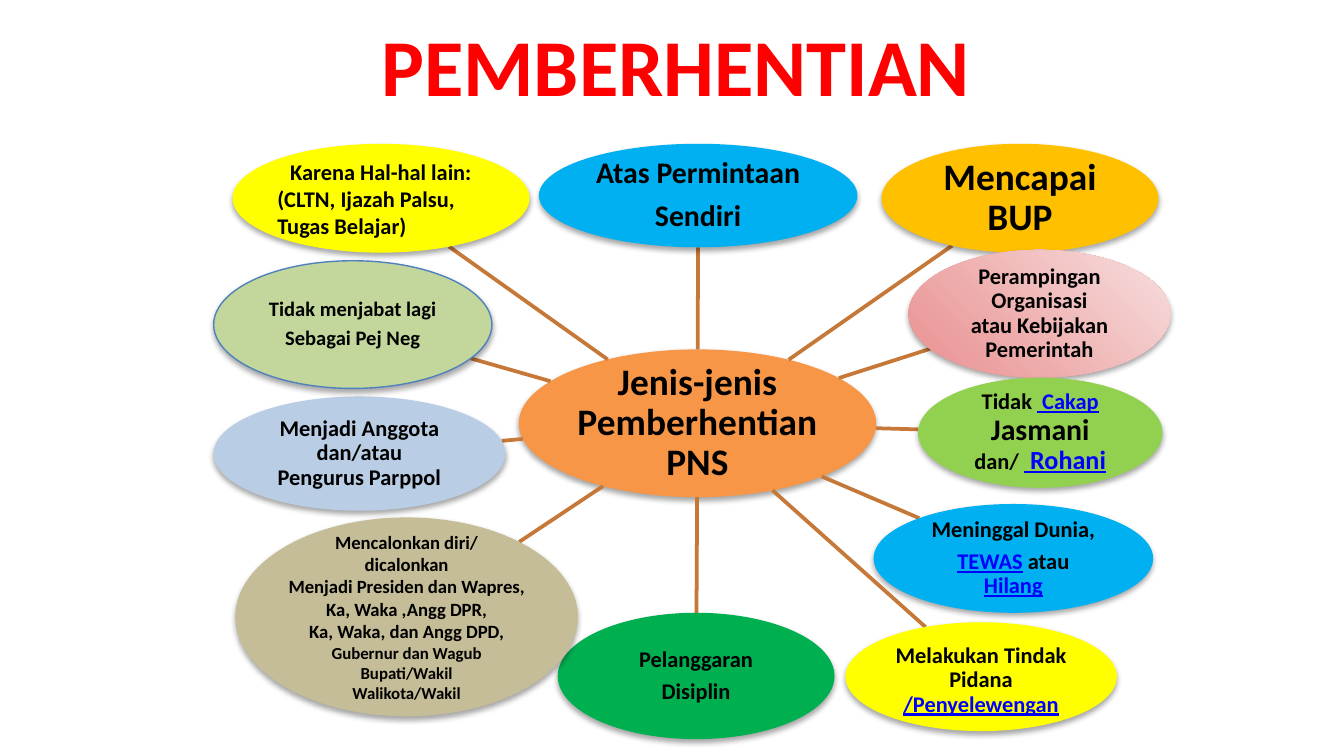
from math import hypot

from lxml.etree import SubElement
from pptx import Presentation
from pptx.dml.color import RGBColor
from pptx.enum.shapes import MSO_CONNECTOR, MSO_SHAPE
from pptx.enum.text import MSO_ANCHOR, PP_ALIGN
from pptx.oxml.ns import qn
from pptx.util import Emu, Pt

PX = 9144  # 100 px to the inch
FONT = "Calibri"
COLORS = {
    "black": "000000", "red": "FF0000", "link": "0000FF", "spoke": "C67838",
    "orange": "F79646", "sky": "00B0F0", "amber": "FFC000", "lime": "92D050",
    "yellow": "FFFF00", "green": "00B050", "khaki": "C4BD97", "pale blue": "B9CDE5",
    "sage": "C3D69B", "edge": "4F81BD", "rose": "E98F8F", "pale rose": "F7DEDE",
}
LINK = {"color": "link", "underline": True}
BREAK = "\n"

# Content: a paragraph is a string or a list of spans; a span is a string or (text, format)
TITLE = {"at": (53, 21, 900, 54), "text": ["PEMBERHENTIAN"], "size": 43.2, "color": "red"}
HUB = {"at": (386, 260, 266, 110), "fill": "orange", "size": 20,
       "text": ["Jenis-jenis", "Pemberhentian", "PNS"]}
NODES = [
    {"at": (401, 107, 237, 77), "fill": "sky", "size": 16, "after": 0.35,
     "text": ["Atas Permintaan", "Sendiri"]},
    {"at": (656, 107, 206, 81), "fill": "amber", "size": 20, "text": ["Mencapai BUP"]},
    {"at": (676, 186, 195, 95), "fill": ("rose", "pale rose"),
     "text": ["Perampingan", "Organisasi", "atau Kebijakan Pemerintah"]},
    {"at": (683, 281, 182, 82), "fill": "lime",
     "text": [["Tidak ", (" Cakap", LINK), BREAK, ("Jasmani", {"size": 16})],
              ["dan/ ", (" Rohani", {**LINK, "size": 14})]]},
    {"at": (650, 375, 208, 81), "fill": "sky", "after": 0.35,
     "text": ["Meninggal Dunia,",
              [("TEWAS", LINK), " atau", BREAK, ("Hilang", LINK)]]},
    {"at": (629, 463, 202, 81), "fill": "yellow", "top": 7,
     "text": ["Melakukan Tindak", "Pidana", [("/Penyelewengan", LINK)]]},
    {"at": (415, 456, 206, 94), "fill": "green", "after": 0.35,
     "text": ["Pelanggaran", "Disiplin"]},
    {"at": (175, 385, 255, 148), "fill": "khaki", "size": 10, "spacing": 1.0,
     "text": ["Mencalonkan diri/", "dicalonkan", "Menjadi Presiden dan Wapres,",
              "Ka, Waka ,Angg DPR,", "Ka, Waka, dan Angg DPD,",
              [("Gubernur dan Wagub", {"size": 9})], [("Bupati/Wakil", {"size": 9})],
              [("Walikota/Wakil", {"size": 9})]]},
    {"at": (159, 295, 217, 85), "fill": "pale blue",
     "text": ["Menjadi Anggota", "dan/atau", "Pengurus Parppol"]},
    {"at": (159, 194, 207, 95), "fill": "sage", "edge": "edge", "size": 11, "after": 0.35,
     "text": ["Tidak menjabat lagi", "Sebagai Pej Neg"]},
    {"at": (173, 107, 221, 81), "fill": "yellow", "spacing": 1.0,
     "aligns": [PP_ALIGN.CENTER, PP_ALIGN.LEFT],
     "text": ["Karena Hal-hal lain:", "(CLTN, Ijazah Palsu, Tugas Belajar)"]},
]


def color(name):
    return RGBColor.from_string(COLORS[name])


def px(*values):
    return [Emu(round(value * PX)) for value in values]


def write(box, text, size=12, color_name="black", spacing=0.9, after=0, top=1, aligns=None):
    frame = box.text_frame
    frame.word_wrap = True
    frame.vertical_anchor = MSO_ANCHOR.MIDDLE
    frame.margin_left, frame.margin_top, frame.margin_right, frame.margin_bottom = px(1, top, 1, 1)
    for index, spans in enumerate(text):
        para = frame.add_paragraph() if index else frame.paragraphs[0]
        para.alignment = aligns[index] if aligns else PP_ALIGN.CENTER
        para.line_spacing = spacing
        para.space_after = Pt(after * size)
        for part in [spans] if isinstance(spans, str) else spans:
            if part == BREAK:
                para.add_line_break()
                continue
            words, look = (part, {}) if isinstance(part, str) else part
            span = para.add_run()
            span.text = words
            span.font.name = FONT
            span.font.bold = True
            span.font.size = Pt(look.get("size", size))
            span.font.underline = look.get("underline", False)
            span.font.color.rgb = color(look.get("color", color_name))


def add_shadow(shape):
    shape.shadow.inherit = False
    effects = shape._element.spPr.find(qn("a:effectLst"))
    shadow = SubElement(effects, qn("a:outerShdw"), blurRad=str(Pt(3.1)), dist=str(Pt(1.8)),
                        dir="5400000", rotWithShape="0")
    tint = SubElement(shadow, qn("a:srgbClr"), val=COLORS["black"])
    SubElement(tint, qn("a:alpha"), val="35000")


def add_ellipse(page, node):
    shape = page.shapes.add_shape(MSO_SHAPE.OVAL, *px(*node["at"]))
    if isinstance(node["fill"], tuple):
        shape.fill.gradient()
        shape.fill.gradient_angle = 45
        for stop, name in zip(shape.fill.gradient_stops, node["fill"]):
            stop.color.rgb = color(name)
    else:
        shape.fill.solid()
        shape.fill.fore_color.rgb = color(node["fill"])
    if "edge" in node:
        shape.line.color.rgb = color(node["edge"])
        shape.line.width = Pt(0.75)
    else:
        shape.line.fill.background()
    add_shadow(shape)
    layout = {key: node[key] for key in ("size", "spacing", "after", "top", "aligns") if key in node}
    write(shape, node["text"], **layout)


def center(at):
    left, top, width, height = at
    return left + width / 2, top + height / 2


def rim_point(at, target):
    """Where the ray from an ellipse's centre to the target crosses its rim."""
    x, y = center(at)
    dx, dy = target[0] - x, target[1] - y
    share = 1 / hypot(dx / (at[2] / 2), dy / (at[3] / 2))
    return x + dx * share, y + dy * share


def add_spoke(page, hub, node):
    start = rim_point(hub, center(node))
    end = rim_point(node, center(hub))
    spoke = page.shapes.add_connector(MSO_CONNECTOR.STRAIGHT, *px(*start, *end))
    spoke.line.color.rgb = color("spoke")
    spoke.line.width = Pt(2)
    SubElement(spoke._element.spPr, qn("a:effectLst"))


def main():
    deck = Presentation()
    deck.slide_width, deck.slide_height = px(1000, 562.5)
    page = deck.slides.add_slide(deck.slide_layouts[6])

    # Title
    box = page.shapes.add_textbox(*px(*TITLE["at"]))
    write(box, TITLE["text"], size=TITLE["size"], color_name=TITLE["color"], spacing=1.0)

    # Hub, then each spoke with its ellipse
    add_ellipse(page, HUB)
    for node in NODES:
        add_spoke(page, HUB["at"], node["at"])
        add_ellipse(page, node)

    deck.save("out.pptx")


if __name__ == "__main__":
    main()
